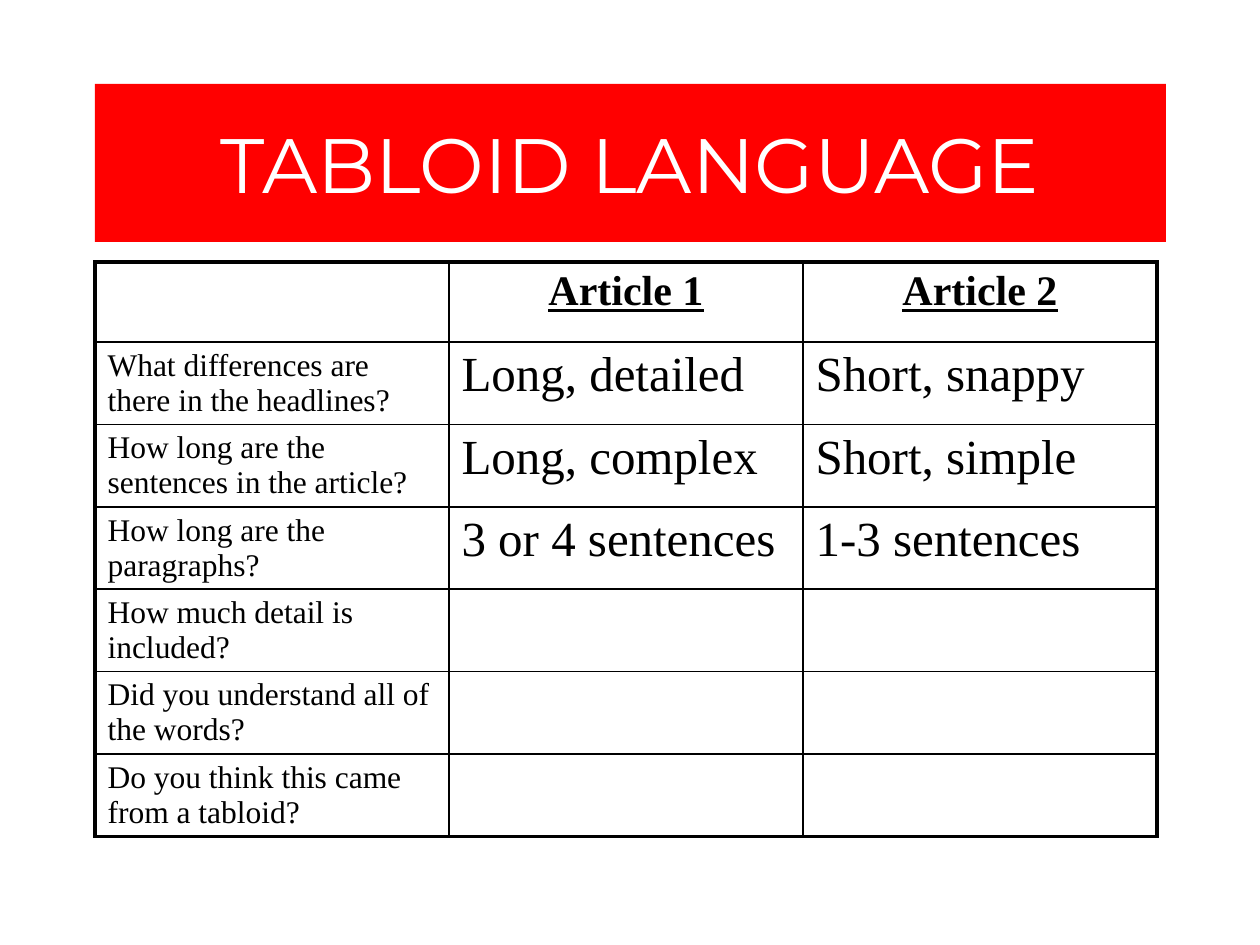
from lxml.etree import SubElement
from pptx import Presentation
from pptx.dml.color import RGBColor
from pptx.enum.text import MSO_ANCHOR, PP_ALIGN
from pptx.oxml.ns import qn
from pptx.util import Pt

PX = 914400 / 126
RED = RGBColor(255, 0, 0)
WHITE = RGBColor(255, 255, 255)
BLACK = RGBColor(0, 0, 0)
THIN, THICK = 1, 2.25

ROWS = [
    ("", "Article 1", "Article 2"),
    ("What differences are there in the headlines?", "Long, detailed", "Short, snappy"),
    ("How long are the sentences in the article?", "Long, complex", "Short, simple"),
    ("How long are the paragraphs?", "3 or 4 sentences", "1-3 sentences"),
    ("How much detail is included?", "", ""),
    ("Did you understand all of the words?", "", ""),
    ("Do you think this came from a tabloid?", "", ""),
]


def emu(px):
    return round(px * PX)


def write(frame, text, size=18, font="Times New Roman", color=BLACK,
          bold=False, line=False, align=PP_ALIGN.LEFT):
    frame.text = text
    para = frame.paragraphs[0]
    para.alignment = align
    style = para.runs[0].font if para.runs else para.font
    style.name, style.size = font, Pt(size)
    style.bold, style.underline = bold, line
    style.color.rgb = color


def edge(cell, **sides):
    """Draw cell borders; sides are given as L, R, T, B in points."""
    props = cell._tc.get_or_add_tcPr()
    for side, width in sides.items():
        line = SubElement(props, qn(f"a:ln{side}"), w=str(Pt(width)))
        fill = SubElement(line, qn("a:solidFill"))
        SubElement(fill, qn("a:srgbClr"), val=str(BLACK))


class Deck:
    def __init__(self, wide, high):
        self.show = Presentation()
        self.show.slide_width, self.show.slide_height = emu(wide), emu(high)
        self.slide = self.show.slides.add_slide(self.show.slide_layouts[5])

    def title(self, text, *box):
        shape = self.slide.shapes.title
        shape.left, shape.top, shape.width, shape.height = map(emu, box)
        shape.fill.solid()
        shape.fill.fore_color.rgb = RED
        frame = shape.text_frame
        frame.vertical_anchor = MSO_ANCHOR.MIDDLE
        write(frame, text, size=44, font="Montserrat", color=WHITE,
              align=PP_ALIGN.CENTER)

    def table(self, rows, left, top, wide, high):
        """Add a grid with thick outer borders; wide and high are per cell."""
        count, span = len(rows), len(rows[0])
        grid = self.slide.shapes.add_table(
            count, span, emu(left), emu(top),
            emu(wide * span), emu(high * count)).table
        grid.first_row = grid.horz_banding = False
        for r, row in enumerate(rows):
            for c, text in enumerate(row):
                cell = grid.cell(r, c)
                edge(cell, L=THIN if c else THICK,
                     R=THICK if c == span - 1 else THIN,
                     T=THIN if r else THICK,
                     B=THICK if r == count - 1 else THIN)
                cell.fill.background()
                if r == 0:
                    look = dict(size=24, bold=True, line=True,
                                align=PP_ALIGN.CENTER)
                else:
                    look = dict(size=28 if c and text else 18)
                write(cell.text_frame, text, **look)


def main():
    deck = Deck(1260, 945)
    deck.title("TABLOID LANGUAGE", 95, 84, 1071, 158)
    deck.table(ROWS, 95, 262, 354, 80)
    deck.show.save("out.pptx")


if __name__ == "__main__":
    main()
